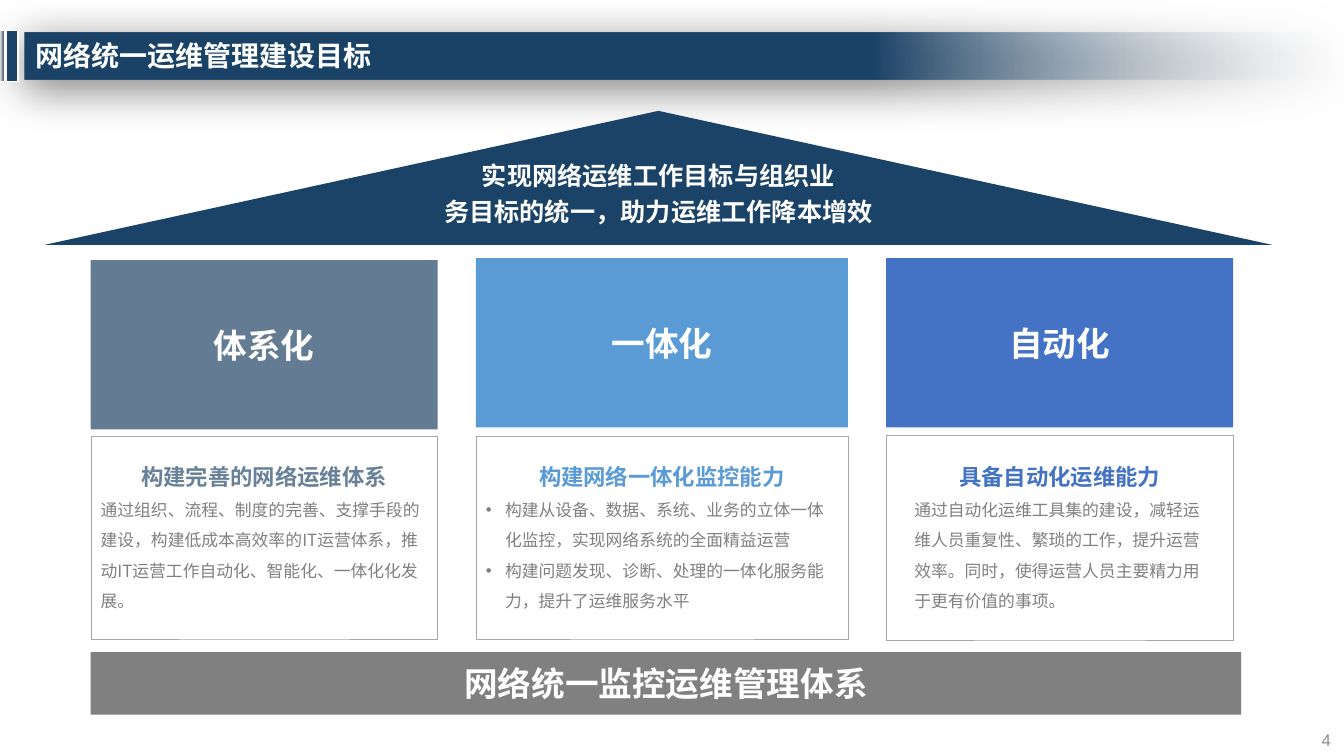
from lxml.etree import SubElement
from pptx import Presentation
from pptx.dml.color import RGBColor
from pptx.enum.shapes import MSO_SHAPE as SHAPE
from pptx.enum.text import MSO_ANCHOR as ANCHOR, PP_ALIGN as ALIGN
from pptx.oxml.ns import qn
from pptx.util import Inches, Pt

NAVY = RGBColor(0x1B, 0x43, 0x67)
SLATE = RGBColor(0x63, 0x7C, 0x93)
SLATE_TEXT = RGBColor(0x69, 0x81, 0x98)
SKY = RGBColor(0x5B, 0x9B, 0xD5)
BLUE = RGBColor(0x44, 0x72, 0xC4)
GRAY = RGBColor(0x80, 0x80, 0x80)
BORDER = RGBColor(0xA6, 0xA6, 0xA6)
NUMBER = RGBColor(0x8C, 0x8C, 0x8C)
PALE = RGBColor(0xF2, 0xF2, 0xF2)
MIST = RGBColor(0xF6, 0xF8, 0xFC)
STEEL = RGBColor(0x44, 0x54, 0x6A)
WHITE = RGBColor(0xFF, 0xFF, 0xFF)
FONT = "Noto Sans CJK SC"


def write(tf, text, size=12, color=GRAY, bold=False, align=ALIGN.LEFT,
          spacing=None, bullet=False, font=FONT):
    p = tf.paragraphs[0] if not tf.text else tf.add_paragraph()
    p.alignment = align
    if spacing:
        p.line_spacing = spacing
    if bullet:
        pPr = p._p.get_or_add_pPr()
        pPr.set("marL", str(Inches(0.19)))
        pPr.set("indent", str(-Inches(0.19)))
        SubElement(pPr, qn("a:buFont"), typeface="Arial")
        SubElement(pPr, qn("a:buChar"), char="•")
    r = p.add_run()
    r.text = text
    r.font.size, r.font.bold, r.font.name = Pt(size), bold, font
    r.font.color.rgb = color
    SubElement(r._r.get_or_add_rPr(), qn("a:ea"), typeface=font)


class Deck:
    def __init__(self, prs):
        self.slide = prs.slides.add_slide(prs.slide_layouts[5])

    def title(self, text, box):
        sp = self.slide.shapes.title
        sp.left, sp.top, sp.width, sp.height = map(Inches, box)
        sp.text_frame.vertical_anchor = ANCHOR.MIDDLE
        write(sp.text_frame, text, size=20, color=WHITE, bold=True, spacing=0.9)
        tree = self.slide.shapes._spTree
        tree.remove(sp._element)
        tree.append(sp._element)

    def shape(self, box, fill=None, line=None, width=1, kind=SHAPE.RECTANGLE):
        sp = self.slide.shapes.add_shape(kind, *map(Inches, box))
        sp.shadow.inherit = False
        if fill is None:
            sp.fill.background()
        else:
            sp.fill.solid()
            sp.fill.fore_color.rgb = fill
        if line is None:
            sp.line.fill.background()
        else:
            sp.line.color.rgb = line
            sp.line.width = Pt(width)
        return sp

    def gradient(self, box, stops, line=None):
        sp = self.shape(box, line=line)
        sp.fill.gradient()
        sp.fill.gradient_angle = 0
        for stop, (position, color) in zip(sp.fill.gradient_stops, stops):
            stop.position = position
            stop.color.rgb = color
        return sp

    def fading_bar(self, box):
        sp = self.gradient(box, [(0.64, NAVY), (1, MIST)])
        spPr = sp._element.spPr
        clear = spPr.findall(".//" + qn("a:srgbClr"))[-1]
        SubElement(clear, qn("a:alpha"), val="0")
        shadow = SubElement(spPr.find(qn("a:effectLst")), qn("a:outerShdw"),
                            blurRad=str(Pt(31)), dist=str(Pt(6)),
                            dir=str(97 * 60000), algn="t", rotWithShape="0")
        black = SubElement(shadow, qn("a:srgbClr"), val="000000")
        SubElement(black, qn("a:alpha"), val="50000")

    def label(self, box, fill, lines, size=24, spacing=None, bottom=0.05, **kw):
        sp = self.shape(box, fill, **kw)
        tf = sp.text_frame
        tf.vertical_anchor = ANCHOR.MIDDLE
        tf.margin_bottom = Inches(bottom)
        for text in lines:
            write(tf, text, size=size, color=WHITE, bold=True,
                  align=ALIGN.CENTER, spacing=spacing)

    def text_box(self, box, anchor=ANCHOR.TOP):
        tf = self.slide.shapes.add_textbox(*map(Inches, box)).text_frame
        tf.word_wrap = True
        tf.vertical_anchor = anchor
        return tf

    def goal(self, box, heading, color, body, bullet=False):
        tf = self.text_box(box)
        write(tf, heading, size=16, color=color, bold=True,
              align=ALIGN.CENTER, spacing=1.5)
        for text in body:
            write(tf, text, spacing=1.5, bullet=bullet)


def main():
    prs = Presentation()
    prs.slide_width, prs.slide_height = Inches(13.33), Inches(7.5)
    deck = Deck(prs)

    deck.fading_bar((0.24, 0.32, 13.11, 0.47))
    deck.shape((0.06, 0.3, 0.12, 0.51), NAVY, WHITE)
    deck.gradient((-0.01, 0.3, 0.06, 0.51), [(0.12, PALE), (0.87, STEEL)], WHITE)
    deck.title("网络统一运维管理建设目标", (0.25, 0.34, 12.2, 0.46))

    deck.label((0.44, 1.1, 12.18, 1.33), NAVY,
               ["实现网络运维工作目标与组织业", "务目标的统一，助力运维工作降本增效"],
               size=18, spacing=1.2, bottom=0.47, kind=SHAPE.ISOSCELES_TRIANGLE)

    pillars = [
        ("体系化", SLATE, SLATE_TEXT, 0.9, 3.44, 2.58, (4.33, 2.01), (0.9, 3.44),
         "构建完善的网络运维体系",
         ["通过组织、流程、制度的完善、支撑手段的建设，构建低成本高效率的IT运营体系，"
          "推动IT运营工作自动化、智能化、一体化化发展。"], False),
        ("一体化", SKY, SKY, 4.72, 3.69, 2.56, (4.33, 2.01), (4.72, 3.69),
         "构建网络一体化监控能力",
         ["构建从设备、数据、系统、业务的立体一体化监控，实现网络系统的全面精益运营",
          "构建问题发现、诊断、处理的一体化服务能力，提升了运维服务水平"], True),
        ("自动化", BLUE, BLUE, 8.79, 3.44, 2.56, (4.32, 2.03), (8.97, 3.08),
         "具备自动化运维能力",
         ["通过自动化运维工具集的建设，减轻运维人员重复性、繁琐的工作，提升运营效率。"
          "同时，使得运营人员主要精力用于更有价值的事项。"], False),
    ]
    for (name, fill, color, left, width, top, (frame_top, frame_height),
         (text_left, text_width), heading, body, bullet) in pillars:
        deck.label((left, top, width, 1.68), fill, [name])
        deck.shape((left, frame_top, width, frame_height), line=BORDER, width=0.25)
        deck.goal((text_left, 4.41, text_width, 1.67), heading, color, body, bullet)

    deck.label((0.9, 6.47, 11.41, 0.62), GRAY, ["网络统一监控运维管理体系"])
    number = deck.text_box((12.65, 7.17, 0.68, 0.34), ANCHOR.MIDDLE)
    number.margin_left = number.margin_right = Inches(0.13)
    write(number, "4", color=NUMBER, align=ALIGN.RIGHT, font="Arial")

    prs.save("out.pptx")


if __name__ == "__main__":
    main()
